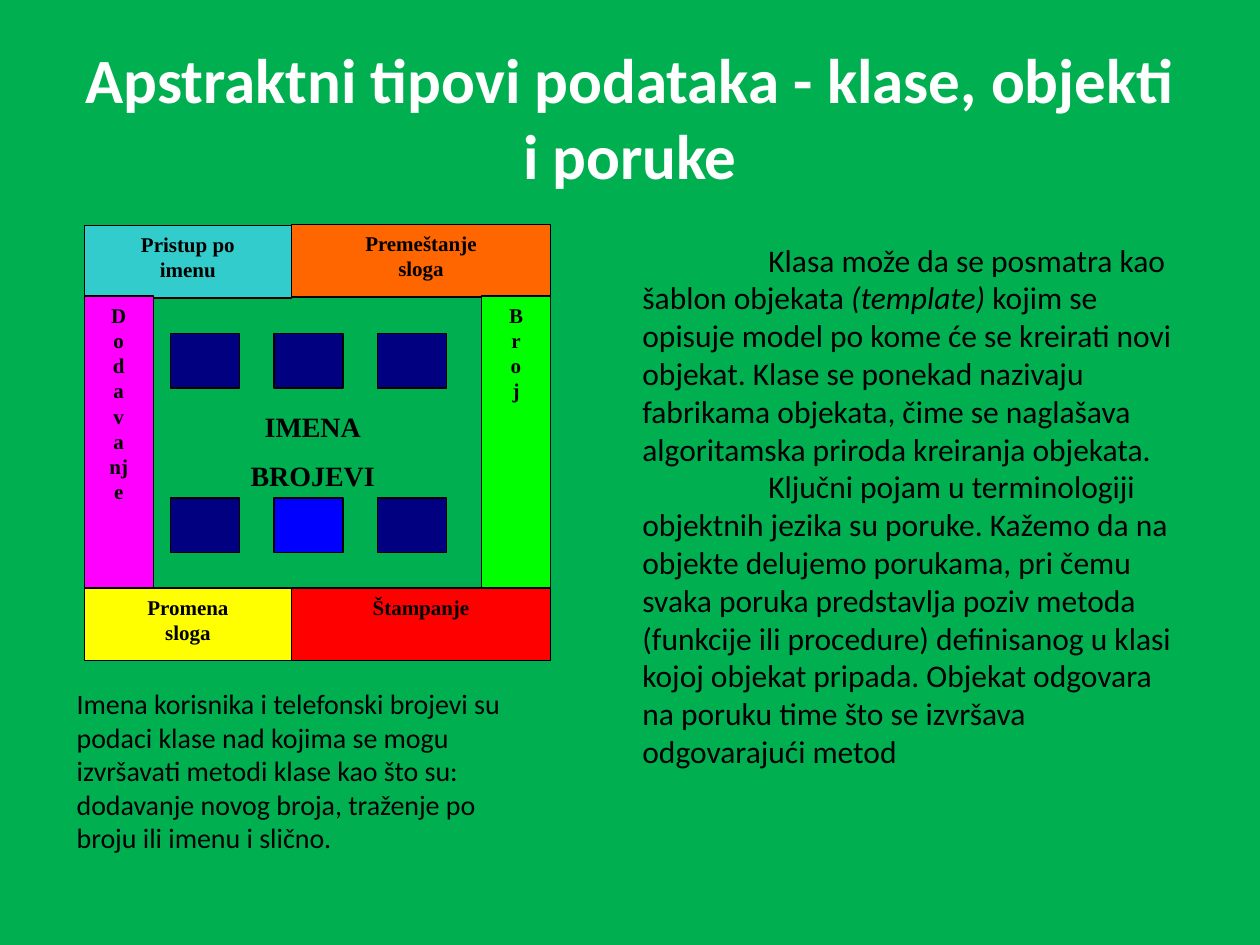
from pptx import Presentation
from pptx.dml.color import RGBColor
from pptx.enum.shapes import MSO_SHAPE
from pptx.enum.text import MSO_ANCHOR, PP_ALIGN
from pptx.util import Pt

RECTANGLE = MSO_SHAPE.RECTANGLE
TOP, MIDDLE = MSO_ANCHOR.TOP, MSO_ANCHOR.MIDDLE
LEFT, CENTER = PP_ALIGN.LEFT, PP_ALIGN.CENTER

GREEN = RGBColor(0x00, 0xB0, 0x50)
WHITE = RGBColor(0xFF, 0xFF, 0xFF)
BLACK = RGBColor(0x00, 0x00, 0x00)
NAVY = RGBColor(0x00, 0x00, 0x80)
BLUE = RGBColor(0x00, 0x00, 0xFF)
TEAL = RGBColor(0x33, 0xCC, 0xCC)
ORANGE = RGBColor(0xFF, 0x66, 0x00)
YELLOW = RGBColor(0xFF, 0xFF, 0x00)
RED = RGBColor(0xFF, 0x00, 0x00)
MAGENTA = RGBColor(0xFF, 0x00, 0xFF)
LIME = RGBColor(0x00, 0xFF, 0x00)

TITLE = {"name": "Calibri", "size": Pt(36), "bold": True}
BODY = {"name": "Calibri", "size": Pt(18)}
CAPTION = {"name": "Calibri", "size": Pt(16)}
LABEL = {"name": "Times New Roman", "size": Pt(12), "bold": True}
DATA = {"name": "Times New Roman", "size": Pt(16), "bold": True}


class SlideBuilder:
    """Draws styled text boxes and panels on the current slide."""

    def __init__(self, page, background):
        self.page = page
        fill = page.background.fill
        fill.solid()
        fill.fore_color.rgb = background

    def fill_text(self, shape, paragraphs, style, color=BLACK, align=LEFT,
                  anchor=TOP, gap=0, indent=0):
        frame = shape.text_frame
        frame.word_wrap = True
        frame.vertical_anchor = anchor
        for index, spans in enumerate(paragraphs):
            para = frame.add_paragraph() if index else frame.paragraphs[0]
            para.alignment = align
            para.space_after = Pt(gap)
            if indent:
                para._p.get_or_add_pPr().set("indent", str(Pt(indent)))
            for text, extra in [(spans, {})] if isinstance(spans, str) else spans:
                span = para.add_run()
                span.text = text
                span.font.color.rgb = color
                for name, value in {**style, **extra}.items():
                    setattr(span.font, name, value)

    def text(self, bounds, paragraphs, style, **layout):
        box = self.page.shapes.add_textbox(*map(Pt, bounds))
        self.fill_text(box, paragraphs, style, **layout)

    def panel(self, bounds, color, lines=()):
        box = self.page.shapes.add_shape(RECTANGLE, *map(Pt, bounds))
        box.shadow.inherit = False
        box.fill.solid()
        box.fill.fore_color.rgb = color
        box.line.color.rgb = BLACK
        box.line.width = Pt(0.75)
        self.fill_text(box, lines, LABEL, align=CENTER)


def main():
    deck = Presentation()
    deck.slide_width, deck.slide_height = Pt(720), Pt(540)
    slide = SlideBuilder(deck.slides.add_slide(deck.slide_layouts[6]), GREEN)

    slide.text((36, 21.6, 648, 90),
               ["Apstraktni tipovi podataka - klase, objekti i poruke"],
               TITLE, color=WHITE, align=CENTER, anchor=MIDDLE)
    slide.text((36.7, 388.8, 278, 103.7),
               ["Imena korisnika i telefonski brojevi su podaci klase nad kojima se "
                "mogu izvršavati metodi klase kao što su: dodavanje novog broja, "
                "traženje po broju ili imenu i slično."], CAPTION)
    slide.text((360, 134, 323.3, 353.5), [
        [("Klasa može da se posmatra kao šablon objekata ", {}),
         ("(template) ", {"italic": True}),
         ("kojim se opisuje model po kome će se kreirati novi objekat. Klase se "
          "ponekad nazivaju fabrikama objekata, čime se naglašava algoritamska "
          "priroda kreiranja objekata.", {})],
        "Ključni pojam u terminologiji objektnih jezika su poruke. Kažemo da na "
        "objekte delujemo porukama, pri čemu svaka poruka predstavlja poziv metoda "
        "(funkcije ili procedure) definisanog u klasi kojoj objekat pripada. Objekat "
        "odgovara na poruku time što se izvršava odgovarajući metod",
    ], BODY, indent=72)

    for top, colors in ((190.5, (NAVY, NAVY, NAVY)), (284.5, (NAVY, BLUE, NAVY))):
        for column, color in enumerate(colors):
            slide.panel((97.4 + 59.2 * column, top, 39.4, 31.2), color)

    left, middle, right = 48.2, 166.6, 314.6
    side_top, side_width, side_height = 169.2, 39.4, 166.8
    bar_height = 41.6
    bottom = side_top + side_height
    for start, end, top, color, lines in (
            (left, middle, 128.7, TEAL, ["Pristup po", "imenu"]),
            (middle, right, 128.2, ORANGE, ["Premeštanje", "sloga"]),
            (left, middle, bottom, YELLOW, ["Promena", "sloga"]),
            (middle, right, bottom, RED, ["Štampanje"])):
        slide.panel((start, top, end - start, bar_height), color, lines)
    for start, color, letters in (
            (left, MAGENTA, [*"Dodava", "nj", "e"]),
            (right - side_width, LIME, [*"Broj"])):
        slide.panel((start, side_top, side_width, side_height), color, letters)

    slide.text((99.2, 230.6, 159, 55.4), ["IMENA", "BROJEVI"], DATA,
               align=CENTER, gap=8.5)
    deck.save("out.pptx")


if __name__ == "__main__":
    main()
